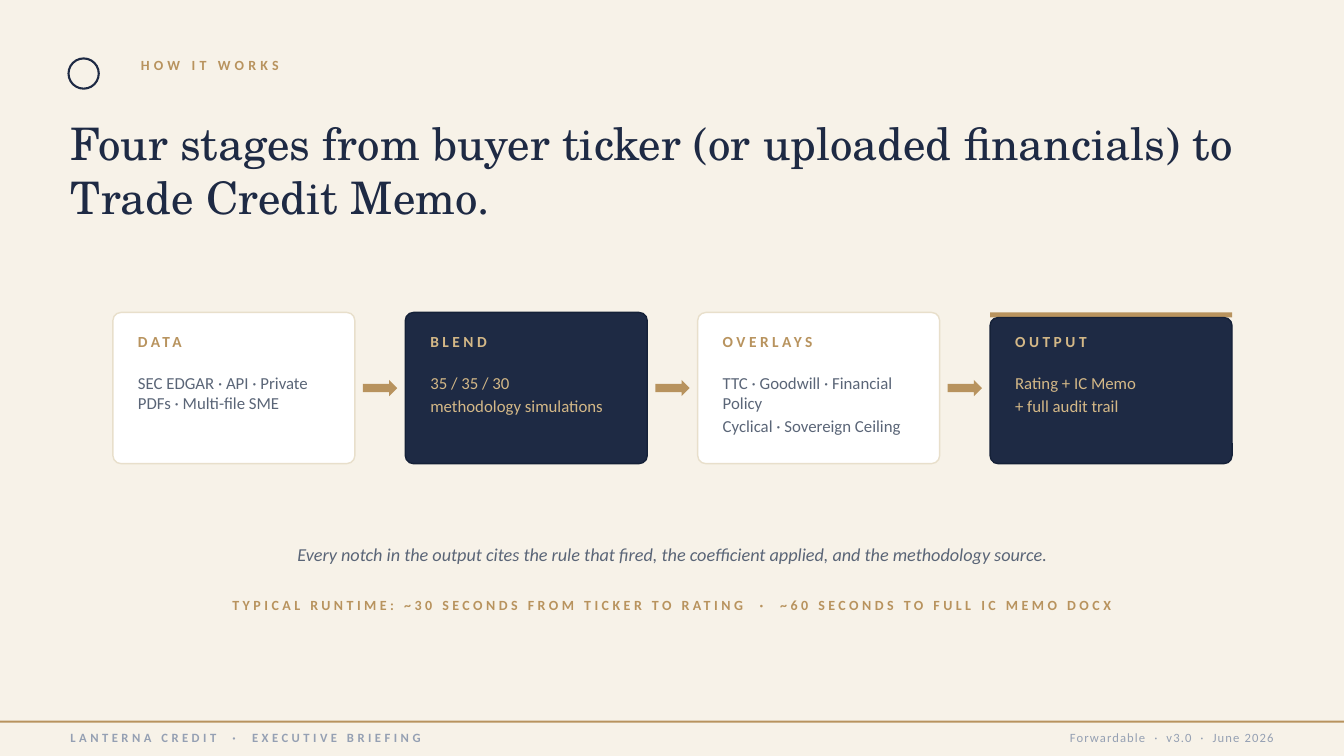
from dataclasses import dataclass

from pptx import Presentation
from pptx.dml.color import RGBColor
from pptx.enum.shapes import MSO_SHAPE
from pptx.enum.text import MSO_ANCHOR, PP_ALIGN
from pptx.util import Inches, Pt


@dataclass(frozen=True)
class Theme:
    # Colours
    cream: str = "F7F2E8"
    navy: str = "1E2A44"
    navy_edge: str = "152138"
    white: str = "FFFFFF"
    sand_edge: str = "E8DFCB"
    gold: str = "B8935E"
    light_gold: str = "D4B887"
    slate: str = "5A6577"
    mist: str = "95A0B3"
    # Fonts
    serif: str = "TeX Gyre Schola"
    sans: str = "Calibri"
    # Type sizes in points
    title: float = 32
    note: float = 13
    body: float = 12
    heading: float = 11
    label: float = 10
    footer: float = 9


class Briefing:
    def __init__(self, slide, theme):
        self.slide = slide
        self.theme = theme
        self.slide.background.fill.solid()
        self.slide.background.fill.fore_color.rgb = RGBColor.from_string(theme.cream)

    def shape(self, kind, left, top, width, height, fill=None, edge=None, weight=1):
        item = self.slide.shapes.add_shape(
            kind, Inches(left), Inches(top), Inches(width), Inches(height))
        item.shadow.inherit = False
        if fill:
            item.fill.solid()
            item.fill.fore_color.rgb = RGBColor.from_string(fill)
        else:
            item.fill.background()
        if edge:
            item.line.color.rgb = RGBColor.from_string(edge)
            item.line.width = Pt(weight)
        else:
            item.line.fill.background()
        return item

    def text(self, left, top, width, height, lines, size, color, font=None,
             bold=False, italic=False, tracking=0, after=None,
             align=PP_ALIGN.LEFT, anchor=MSO_ANCHOR.TOP):
        frame = self.slide.shapes.add_textbox(
            Inches(left), Inches(top), Inches(width), Inches(height)).text_frame
        frame.word_wrap = True
        frame.vertical_anchor = anchor
        frame.text = "\n".join(lines)
        for paragraph in frame.paragraphs:
            paragraph.alignment = align
            if after is not None:
                paragraph.space_after = Pt(after)
            style = paragraph.font
            style.name = font or self.theme.sans
            style.size = Pt(size)
            style.bold = bold
            style.italic = italic
            style.color.rgb = RGBColor.from_string(color)
            if tracking:
                style._rPr.set("spc", str(int(tracking * 100)))

    def card(self, left, top, width, height, heading, lines, dark, strip=0):
        t = self.theme
        fill, edge = (t.navy, t.navy_edge) if dark else (t.white, t.sand_edge)
        if strip:
            self.shape(MSO_SHAPE.RECTANGLE, left, top, width, strip, t.gold)
        panel = self.shape(MSO_SHAPE.ROUNDED_RECTANGLE, left, top + strip,
                           width, height - strip, fill, edge)
        panel.adjustments[0] = 0.08 / (height - strip)
        self.text(left + 0.15, top + 0.15, width - 0.3, 0.4, [heading], t.heading,
                  t.light_gold if dark else t.gold, bold=True, tracking=2.5)
        self.text(left + 0.15, top + 0.55, width - 0.3, 0.85, lines, t.body,
                  t.light_gold if dark else t.slate, after=2)

    def arrow(self, left, top):
        self.shape(MSO_SHAPE.RIGHT_ARROW, left, top, 0.34, 0.16, self.theme.gold)


STAGES = [
    ("DATA", ["SEC EDGAR · API · Private PDFs · Multi-file SME"]),
    ("BLEND", ["35 / 35 / 30", "methodology simulations"]),
    ("OVERLAYS", ["TTC · Goodwill · Financial Policy", "Cyclical · Sovereign Ceiling"]),
    ("OUTPUT", ["Rating + IC Memo", "+ full audit trail"]),
]
CARD_LEFT, CARD_TOP, CARD_WIDTH, CARD_HEIGHT = 1.12, 3.1, 2.4, 1.5
CARD_PITCH = 2.9


def main():
    deck = Presentation()
    deck.slide_width, deck.slide_height = Inches(13.33), Inches(7.5)
    theme = Theme()
    page = Briefing(deck.slides.add_slide(deck.slide_layouts[6]), theme)
    middle = MSO_ANCHOR.MIDDLE

    # Header: plain emblem, section label and title
    page.shape(MSO_SHAPE.OVAL, 0.68, 0.58, 0.3, 0.3, edge=theme.navy, weight=1.5)
    page.text(1.3, 0.5, 6, 0.28, ["HOW IT WORKS"], theme.label, theme.gold,
              bold=True, tracking=3, anchor=middle)
    page.text(0.6, 1.1, 12, 0.95,
              ["Four stages from buyer ticker (or uploaded financials) to Trade Credit Memo."],
              theme.title, theme.navy, font=theme.serif)

    # Four stages, joined by arrows
    last = len(STAGES) - 1
    for index, (heading, lines) in enumerate(STAGES):
        left = CARD_LEFT + index * CARD_PITCH
        page.card(left, CARD_TOP, CARD_WIDTH, CARD_HEIGHT, heading, lines,
                  dark=index % 2 == 1, strip=0.05 if index == last else 0)
        if index < last:
            page.arrow(left + CARD_WIDTH + 0.08, CARD_TOP + 0.67)

    # Closing notes
    page.text(0.6, 5.25, 12.13, 0.5,
              ["Every notch in the output cites the rule that fired, "
               "the coefficient applied, and the methodology source."],
              theme.note, theme.slate, italic=True,
              align=PP_ALIGN.CENTER, anchor=middle)
    page.text(0.6, 5.85, 12.13, 0.3,
              ["TYPICAL RUNTIME: ~30 SECONDS FROM TICKER TO RATING  ·  "
               "~60 SECONDS TO FULL IC MEMO DOCX"],
              theme.label, theme.gold, bold=True, tracking=2.5,
              align=PP_ALIGN.CENTER, anchor=middle)

    # Footer
    page.shape(MSO_SHAPE.RECTANGLE, 0, 7.15, 13.33, 0.02, theme.gold)
    page.text(0.6, 7.17, 6, 0.3, ["LANTERNA CREDIT  ·  EXECUTIVE BRIEFING"],
              theme.footer, theme.mist, bold=True, tracking=2.5, anchor=middle)
    page.text(6.73, 7.17, 6, 0.3, ["Forwardable  ·  v3.0  ·  June 2026"],
              theme.footer, theme.mist, tracking=0.8,
              align=PP_ALIGN.RIGHT, anchor=middle)

    deck.save("out.pptx")


if __name__ == "__main__":
    main()
